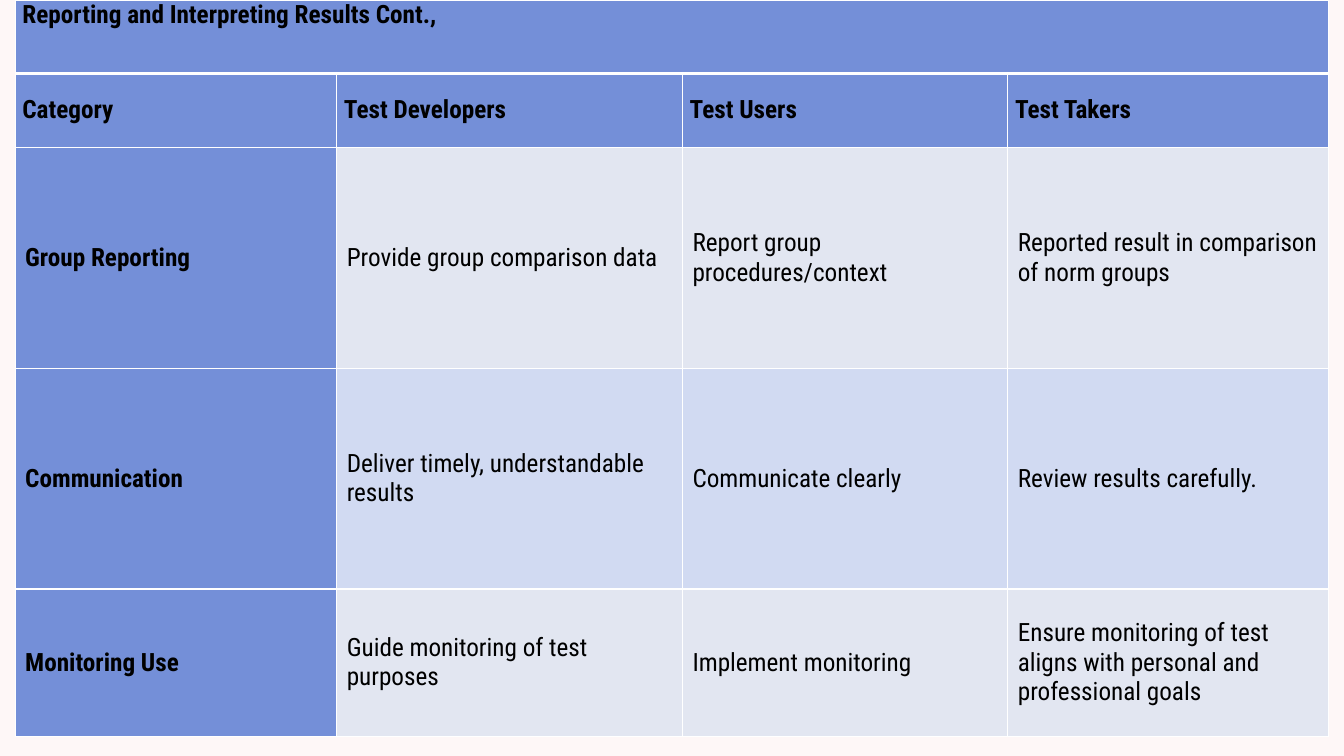
from lxml import etree
from pptx import Presentation
from pptx.dml.color import RGBColor
from pptx.enum.text import MSO_ANCHOR
from pptx.oxml.ns import qn
from pptx.util import Pt

TOP, MIDDLE = MSO_ANCHOR.TOP, MSO_ANCHOR.MIDDLE
BLUSH = RGBColor(0xFE, 0xF7, 0xF7)
BLUE = RGBColor(0x74, 0x8F, 0xD8)
GREY = RGBColor(0xE2, 0xE6, 0xF1)
PALE = RGBColor(0xD1, 0xDA, 0xF2)
BLACK = RGBColor(0, 0, 0)
WHITE = RGBColor(0xFF, 0xFF, 0xFF)

TITLE = "Reporting and Interpreting Results Cont.,"
ROWS = [
    [TITLE, "", "", ""],
    ["Category", "Test Developers", "Test Users", "Test Takers"],
    ["Group Reporting", "Provide group comparison data",
     "Report group procedures/context",
     "Reported result in comparison of norm groups"],
    ["Communication", "Deliver timely, understandable results",
     "Communicate clearly", "Review results carefully."],
    ["Monitoring Use", "Guide monitoring of test purposes",
     "Implement monitoring",
     "Ensure monitoring of test aligns with personal and professional goals"],
]
WIDTHS = [229.7, 247, 232.4, 229]
UNIT = 52.6
HEIGHTS = [UNIT * part for part in (1, 1, 3, 3, 2)]
HEAD = {"margin_left": Pt(5.2), "margin_right": Pt(5.2),
        "margin_top": 0, "margin_bottom": 0}
BODY = {"margin_left": Pt(7.2), "margin_right": Pt(7.2),
        "margin_top": Pt(3.6), "margin_bottom": Pt(3.6)}


def apply(target, style):
    """Set each attribute named in the style."""
    for name, value in style.items():
        setattr(target, name, value)


class Deck:
    """Hold the text style and the current slide."""

    def __init__(self, width, height):
        """Start a deck with one blank slide."""
        self.font = {"name": "Roboto Condensed", "size": Pt(18)}
        self.show = Presentation()
        apply(self.show, {"slide_width": Pt(width), "slide_height": Pt(height)})
        self.slide = self.show.slides.add_slide(self.show.slide_layouts[6])

    def ground(self, color):
        """Fill the slide background."""
        fill = self.slide.background.fill
        fill.solid()
        fill.fore_color.rgb = color

    def border(self, cell, sides):
        """Draw white cell borders with the given widths."""
        props = cell._tc.get_or_add_tcPr()
        for spot, (side, width) in enumerate(sides.items()):
            line = etree.Element(qn(f"a:ln{side}"), w=str(Pt(width)))
            solid = etree.SubElement(line, qn("a:solidFill"))
            etree.SubElement(solid, qn("a:srgbClr"), val=str(WHITE))
            props.insert(spot, line)

    def cell(self, cell, text, color, bold, style, sides):
        """Write and format one table cell."""
        apply(cell, style)
        cell.fill.solid()
        cell.fill.fore_color.rgb = color
        self.border(cell, sides)
        para = cell.text_frame.paragraphs[0]
        apply(para.font, {**self.font, "bold": bold})
        para.font.color.rgb = BLACK
        if text:
            run = para.add_run()
            run.text = text
            apply(run.font, {**self.font, "bold": bold})
            run.font.color.rgb = BLACK

    def table(self, left, top, widths, heights, rows):
        """Add the table with its title row, header row and bands."""
        table = self.slide.shapes.add_table(
            len(rows), len(widths), Pt(left), Pt(top),
            Pt(sum(widths)), Pt(sum(heights))).table
        for col, width in zip(table.columns, widths):
            col.width = Pt(width)
        for row, height in zip(table.rows, heights):
            row.height = Pt(height)
        table.cell(0, 0).merge(table.cell(0, len(widths) - 1))
        for r, texts in enumerate(rows):
            style = {**(HEAD if r < 2 else BODY),
                     "vertical_anchor": MIDDLE if r else TOP}
            sides = {"L": 1, "R": 1, "T": 3 if r == 1 else 1,
                     "B": 1 if r else 3}
            for c, text in enumerate(texts):
                label = r < 2 or c == 0
                band = PALE if r % 2 else GREY
                self.cell(table.cell(r, c), text, BLUE if label else band,
                          label, style, sides)


def main():
    """Build the slide and save it."""
    deck = Deck(960, 540)
    deck.ground(BLUSH)
    deck.table(10.8, 0, WIDTHS, HEIGHTS, ROWS)
    deck.show.save("out.pptx")


if __name__ == "__main__":
    main()
